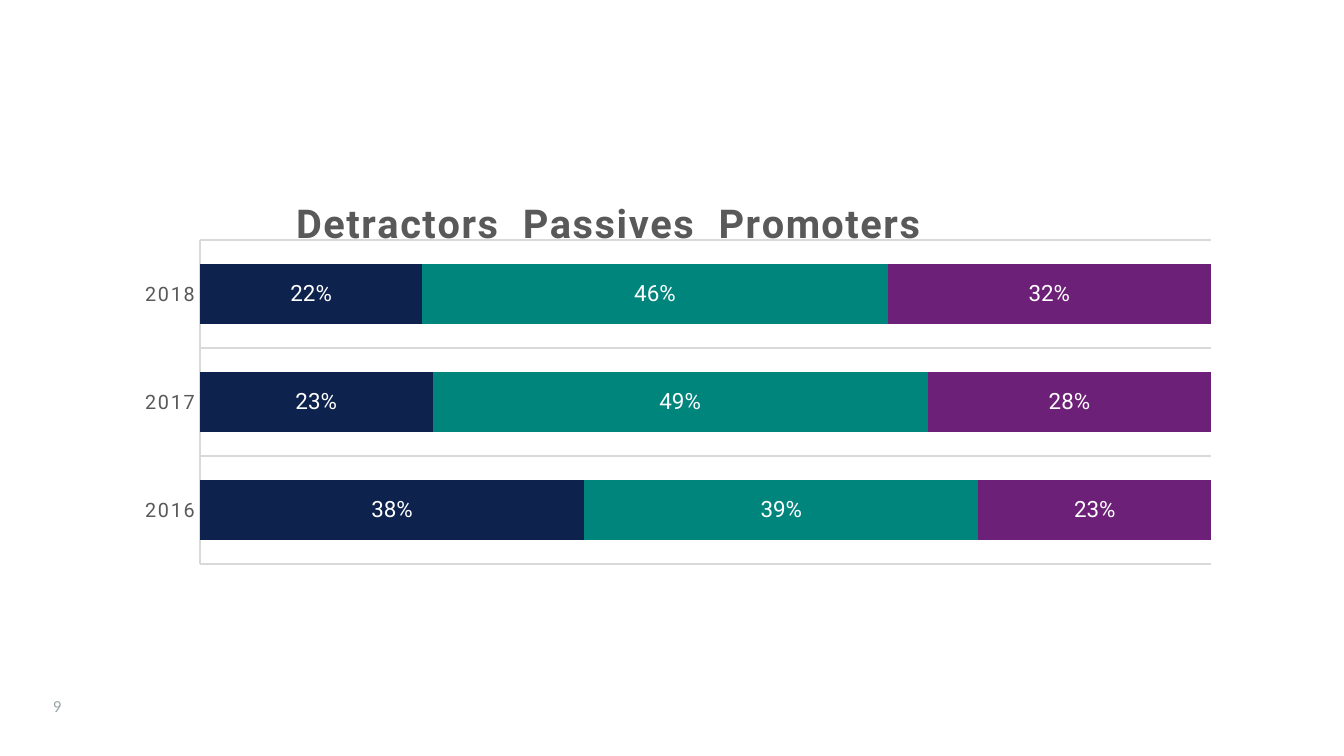
from dataclasses import dataclass
from typing import Optional

from lxml.etree import SubElement
from pptx import Presentation
from pptx.chart.chart import Chart
from pptx.chart.data import CategoryChartData
from pptx.dml.color import RGBColor
from pptx.enum.chart import XL_CHART_TYPE, XL_LABEL_POSITION, XL_TICK_MARK
from pptx.enum.text import MSO_ANCHOR
from pptx.oxml import parse_xml
from pptx.oxml.ns import nsdecls, qn
from pptx.slide import Slide
from pptx.text.text import Font
from pptx.util import Cm, Pt


@dataclass(frozen=True)
class Theme:
    chart_font: str = "Roboto"
    number_font: str = "Calibri"
    title_size: float = 21.3
    label_size: float = 12
    category_size: float = 10.6
    number_size: float = 9
    letter_spacing: str = "100"
    text: str = "595959"
    label: str = "FFFFFF"
    line: str = "D9D9D9"
    number: str = "9BA7A8"


@dataclass(frozen=True)
class Series:
    name: str
    shares: tuple[float, ...]
    color: str


THEME = Theme()
YEARS = ("2016", "2017", "2018")
SERIES = (
    Series("Series 1", (0.38, 0.23, 0.22), "0D224C"),
    Series("Series 2", (0.39, 0.49, 0.46), "00857D"),
    Series("Series 3", (0.23, 0.28, 0.32), "6D2077"),
)


def set_font(font: Font, name: str, size: float, color: str, bold: bool = False) -> None:
    font.name = name
    font.size = Pt(size)
    font.bold = bold
    font.color.rgb = RGBColor.from_string(color)


def set_layout(parent, index: int, x: float, y: float,
               size: Optional[tuple[float, float]] = None) -> None:
    """Place a chart part by hand, in fractions of the chart area."""
    for old_layout in parent.findall(qn("c:layout")):
        parent.remove(old_layout)
    layout = parse_xml(f"<c:layout {nsdecls('c')}><c:manualLayout/></c:layout>")
    manual = layout[0]
    values = {"xMode": "edge", "yMode": "edge", "x": x, "y": y}
    if size:
        values = {"layoutTarget": "inner", **values, "w": size[0], "h": size[1]}
    for tag, value in values.items():
        SubElement(manual, qn(f"c:{tag}")).set("val", str(value))
    parent.insert(index, layout)


def add_title(chart: Chart) -> None:
    chart.has_title = True
    run = chart.chart_title.text_frame.paragraphs[0].add_run()
    run.text = "Detractors  Passives  Promoters"
    set_font(run.font, THEME.chart_font, THEME.title_size, THEME.text, bold=True)
    set_layout(chart.element.xpath(".//c:title")[0], 1, 0.15, 0.08)


def style_axes(chart: Chart) -> None:
    axis = chart.category_axis
    axis.major_tick_mark = axis.minor_tick_mark = XL_TICK_MARK.NONE
    axis.has_major_gridlines = True
    for line in (axis.format.line, axis.major_gridlines.format.line):
        line.color.rgb = RGBColor.from_string(THEME.line)
        line.width = Pt(0.75)
    set_font(axis.tick_labels.font, THEME.chart_font, THEME.category_size, THEME.text)

    chart.value_axis.has_major_gridlines = False
    chart.value_axis.visible = False
    chart.value_axis.minimum_scale = 0
    chart.value_axis.maximum_scale = 1


def style_bars(chart: Chart) -> None:
    plot = chart.plots[0]
    plot.gap_width = 79
    plot.overlap = 100
    plot.vary_by_categories = False
    for bars, series in zip(plot.series, SERIES):
        bars.format.fill.solid()
        bars.format.fill.fore_color.rgb = RGBColor.from_string(series.color)
        labels = bars.data_labels
        labels.show_value = True
        labels.position = XL_LABEL_POSITION.CENTER
        labels.number_format = "0%"
        labels.number_format_is_linked = False
        set_font(labels.font, THEME.chart_font, THEME.label_size, THEME.label)


def add_share_chart(slide: Slide) -> None:
    chart_data = CategoryChartData(number_format="0%")
    chart_data.categories = YEARS
    for series in SERIES:
        chart_data.add_series(series.name, series.shares)
    chart = slide.shapes.add_chart(
        XL_CHART_TYPE.BAR_STACKED_100, Cm(2.31), Cm(2.97), Cm(21), Cm(7.85), chart_data
    ).chart
    chart.has_legend = False
    chart.font.name = THEME.chart_font
    chart.font.size = Pt(10)
    add_title(chart)
    style_axes(chart)
    style_bars(chart)
    set_layout(chart.element.xpath(".//c:plotArea")[0], 0, 0.07, 0.2, (0.91, 0.78))
    for properties in chart.element.xpath(".//c:title//a:rPr | .//c:catAx//a:defRPr"):
        properties.set("spc", THEME.letter_spacing)


def add_page_number(slide: Slide, number: int) -> None:
    box = slide.shapes.add_textbox(Cm(1), Cm(12.85), Cm(0.56), Cm(1))
    frame = box.text_frame
    frame.word_wrap = True
    frame.vertical_anchor = MSO_ANCHOR.MIDDLE
    frame.margin_left = frame.margin_right = frame.margin_top = frame.margin_bottom = 0
    paragraph = frame.paragraphs[0]
    paragraph.text = str(number)
    set_font(paragraph.font, THEME.number_font, THEME.number_size, THEME.number)


def main() -> None:
    presentation = Presentation()
    presentation.slide_width = Cm(25.4)
    presentation.slide_height = Cm(14.29)
    slide = presentation.slides.add_slide(presentation.slide_layouts[6])
    add_page_number(slide, 9)
    add_share_chart(slide)
    presentation.save("out.pptx")


if __name__ == "__main__":
    main()
